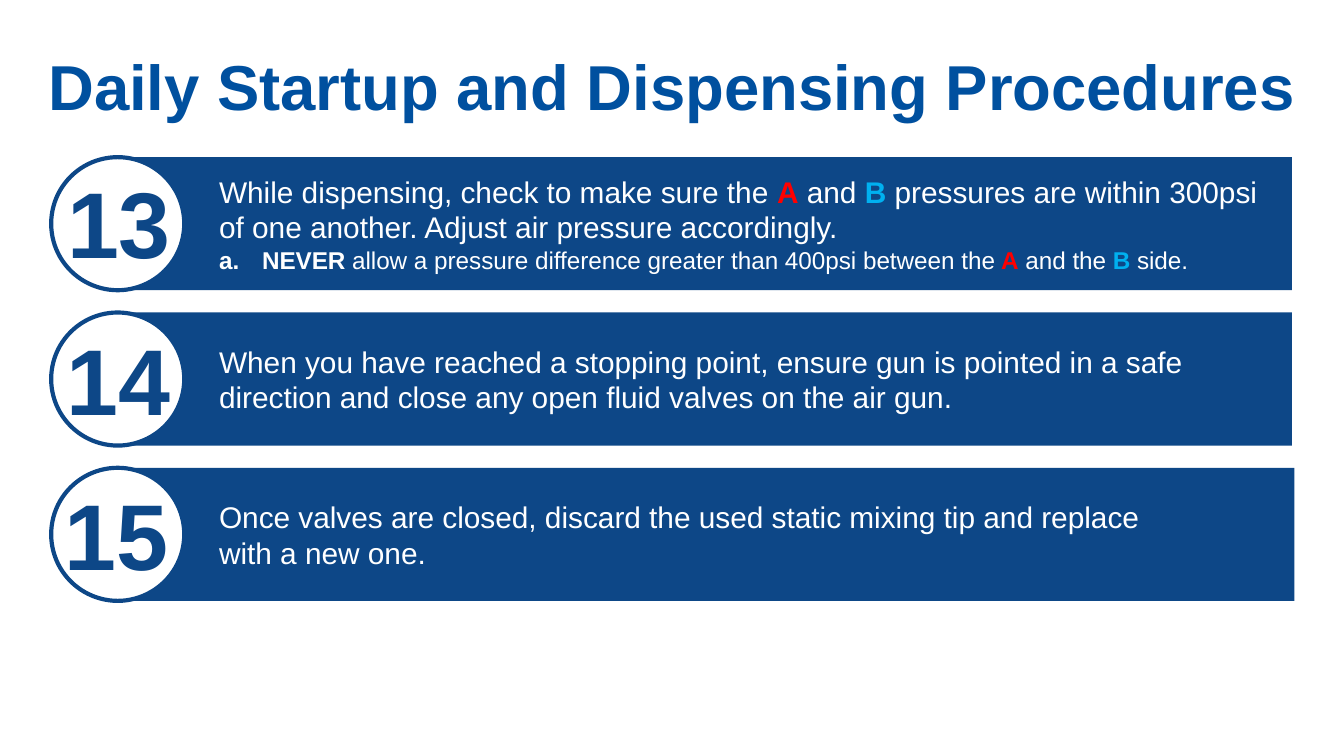
from dataclasses import dataclass
from typing import Any

from lxml import etree
from pptx import Presentation
from pptx.dml.color import RGBColor
from pptx.enum.shapes import MSO_SHAPE
from pptx.enum.text import MSO_ANCHOR, MSO_AUTO_SIZE, PP_ALIGN
from pptx.oxml.ns import qn
from pptx.util import Pt

RECTANGLE, OVAL = MSO_SHAPE.RECTANGLE, MSO_SHAPE.OVAL
TOP, MIDDLE = MSO_ANCHOR.TOP, MSO_ANCHOR.MIDDLE
LEFT, CENTER = PP_ALIGN.LEFT, PP_ALIGN.CENTER
GROW = MSO_AUTO_SIZE.SHAPE_TO_FIT_TEXT

BAR_LEFT, CIRCLE_LEFT = 56.9, 27.4
FIRST_TOP, STEP_PITCH, STEP_HEIGHT = 84.2, 83.2, 71.3

A_SIDE = ("A", {"color": "FF0000", "bold": True})
B_SIDE = ("B", {"color": "00B0F0", "bold": True})


def color(value):
    return RGBColor.from_string(value)


def add_text(paragraph, text, size=16, color_hex="FFFFFF", bold=False, font="Arial"):
    for index, line in enumerate(text.split("\n")):
        if index:
            paragraph.add_line_break()
        run = paragraph.add_run()
        run.text = line
        run.font.name = font
        run.font.size = Pt(size)
        run.font.bold = bold
        run.font.color.rgb = color(color_hex)


def indent(paragraph, margin, first_line=0, numbering=None):
    properties = paragraph._p.get_or_add_pPr()
    properties.set("marL", str(Pt(margin)))
    properties.set("indent", str(Pt(first_line)))
    if numbering:
        etree.SubElement(properties, qn("a:buFont")).set("typeface", "Arial")
        etree.SubElement(properties, qn("a:buAutoNum")).set("type", numbering)


@dataclass
class SlideBuilder:
    slide: Any
    blue: str = "0D4787"
    title_blue: str = "00509F"
    white: str = "FFFFFF"

    def shape(self, shapes, kind, left, top, width, height, fill, line=None):
        shape = shapes.add_shape(kind, Pt(left), Pt(top), Pt(width), Pt(height))
        shape.shadow.inherit = False
        shape.fill.solid()
        shape.fill.fore_color.rgb = color(fill)
        if line:
            shape.line.color.rgb = color(line)
            shape.line.width = Pt(2.25)
        else:
            shape.line.fill.background()
        return shape

    def label(self, shapes, text, left, top, width, height, anchor=TOP, **style):
        box = shapes.add_textbox(Pt(left), Pt(top), Pt(width), Pt(height))
        frame = box.text_frame
        frame.word_wrap = True
        frame.vertical_anchor = anchor
        if anchor == TOP:
            frame.auto_size = GROW
        paragraph = frame.paragraphs[0]
        paragraph.alignment = CENTER
        add_text(paragraph, text, bold=True, **style)

    def title(self, text):
        self.label(self.slide.shapes, text, 0, 11.5, 720, 67.7, MIDDLE,
                   size=34, color_hex=self.title_blue)

    def instructions(self, bar, runs, substep):
        frame = bar.text_frame
        frame.word_wrap = True
        frame.vertical_anchor = MIDDLE
        frame.margin_left, frame.margin_right = Pt(28.8), Pt(14.4)
        paragraph = frame.paragraphs[0]
        paragraph.alignment = LEFT
        indent(paragraph, 31.7)
        for text, style in runs:
            self.styled_run(paragraph, text, 16, style)
        if substep:
            paragraph = frame.add_paragraph()
            paragraph.alignment = LEFT
            indent(paragraph, 54.7, -23, "alphaLcPeriod")
            for text, style in substep:
                self.styled_run(paragraph, text, 13, style)

    def styled_run(self, paragraph, text, size, style):
        add_text(paragraph, text, size=size, bold=style.get("bold", False),
                 color_hex=style.get("color", self.white))

    def step(self, top, number, number_offset, bar_width, runs, substep=()):
        shapes = self.slide.shapes.add_group_shape().shapes
        bar = self.shape(shapes, RECTANGLE, BAR_LEFT, top, bar_width, STEP_HEIGHT, self.blue)
        self.instructions(bar, runs, substep)
        self.shape(shapes, OVAL, CIRCLE_LEFT, top, STEP_HEIGHT, STEP_HEIGHT,
                   self.white, self.blue)
        shift_x, shift_y = number_offset
        self.label(shapes, number, CIRCLE_LEFT + shift_x, top + shift_y,
                   STEP_HEIGHT, 67.7, size=50, color_hex=self.blue)


def main():
    presentation = Presentation()
    presentation.slide_width, presentation.slide_height = Pt(720), Pt(405)
    slide = presentation.slides.add_slide(presentation.slide_layouts[6])
    builder = SlideBuilder(slide)

    steps = [
        ("13", (0.7, 0.8), 635.2, [
            ("While dispensing, check to make sure the ", {}), A_SIDE,
            (" and ", {}), B_SIDE,
            (" pressures are within 300psi of one another. "
             "Adjust air pressure accordingly.", {}),
        ], [
            ("NEVER", {"bold": True}),
            (" allow a pressure difference greater than 400psi between the ", {}), A_SIDE,
            (" and the ", {}), B_SIDE, (" side.", {}),
        ]),
        ("14", (0.4, 1.6), 635.2, [
            ("When you have reached a stopping point, ensure gun is pointed in a safe "
             "direction and close any open fluid valves on the air gun.", {}),
        ]),
        ("15", (-0.7, 1.6), 636.6, [
            ("Once valves are closed, discard the used static mixing tip and replace "
             "\nwith a new one.", {}),
        ]),
    ]
    for index, step in enumerate(steps):
        builder.step(FIRST_TOP + index * STEP_PITCH, *step)
    builder.title("Daily Startup and Dispensing Procedures")

    presentation.save("out.pptx")


if __name__ == "__main__":
    main()
